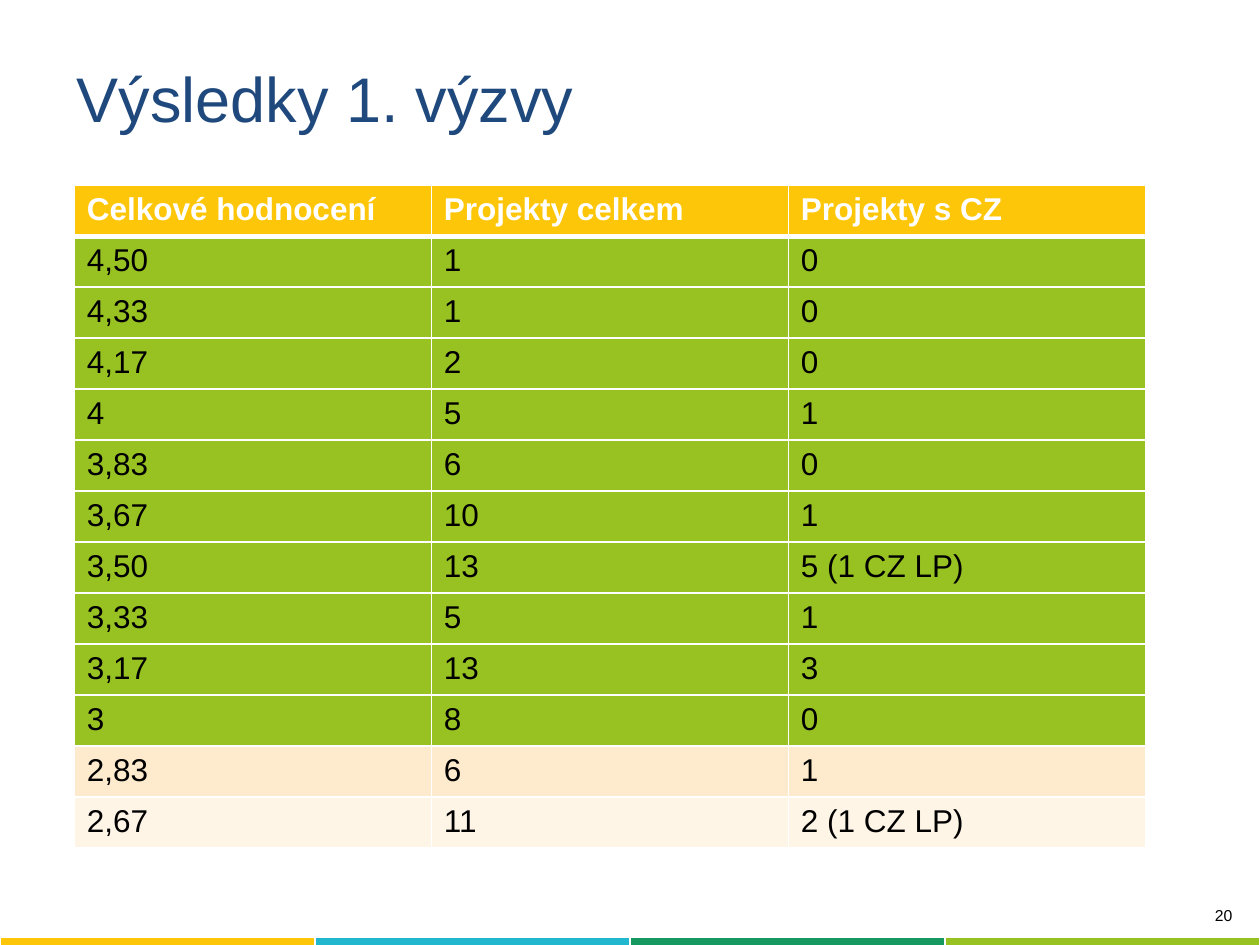
from dataclasses import dataclass

from lxml import etree
from pptx import Presentation
from pptx import util as u
from pptx.dml.color import RGBColor
from pptx.enum import text
from pptx.oxml import ns


@dataclass(frozen=True)
class Theme:
    font: str = "Arial"
    title_size: int = 36
    table_size: int = 18
    number_size: int = 9
    title: str = "1F497D"
    black: str = "000000"
    white: str = "FFFFFF"
    yellow: str = "FDC609"
    blue: str = "21B7CF"
    teal: str = "159960"
    green: str = "98C222"
    peach: str = "FEEACC"
    cream: str = "FFF5E7"


THEME = Theme()
HEADINGS = ("Celkové hodnocení", "Projekty celkem", "Projekty s CZ")
FUNDED = (
    ("4,50", "1", "0"),
    ("4,33", "1", "0"),
    ("4,17", "2", "0"),
    ("4", "5", "1"),
    ("3,83", "6", "0"),
    ("3,67", "10", "1"),
    ("3,50", "13", "5 (1 CZ LP)"),
    ("3,33", "5", "1"),
    ("3,17", "13", "3"),
    ("3", "8", "0"),
)
REJECTED = (("2,83", "6", "1"), ("2,67", "11", "2 (1 CZ LP)"))


def write_text(frame, content, *, size, color, bold=False, align=text.PP_ALIGN.LEFT):
    paragraph = frame.paragraphs[0]
    paragraph.alignment = align
    run = paragraph.add_run()
    run.text = content
    run.font.name = THEME.font
    run.font.size = u.Pt(size)
    run.font.bold = bold
    run.font.color.rgb = RGBColor.from_string(color)


def add_text_box(slide, content, left, top, width, height,
                 anchor=text.MSO_ANCHOR.TOP, **text_format):
    shape = slide.shapes.add_textbox(
        u.Inches(left), u.Inches(top), u.Inches(width), u.Inches(height))
    frame = shape.text_frame
    frame.word_wrap = True
    frame.vertical_anchor = anchor
    write_text(frame, content, **text_format)


def add_table(slide, rows, columns, left, top, width, row_height):
    shape = slide.shapes.add_table(
        rows, columns, u.Inches(left), u.Inches(top),
        u.Inches(width), u.Inches(rows * row_height))
    return shape.table


def fill_cell(cell, color):
    cell.fill.solid()
    cell.fill.fore_color.rgb = RGBColor.from_string(color)


def set_borders(cell, top, bottom):
    properties = cell._tc.get_or_add_tcPr()
    for side, width in (("L", 1), ("R", 1), ("T", top), ("B", bottom)):
        line = etree.SubElement(properties, ns.qn(f"a:ln{side}"), w=str(u.Pt(width)))
        fill = etree.SubElement(line, ns.qn("a:solidFill"))
        etree.SubElement(fill, ns.qn("a:srgbClr"), val=THEME.white)


def add_results(slide):
    rows = (HEADINGS, *FUNDED, *REJECTED)
    fills = (THEME.yellow, *[THEME.green] * len(FUNDED), THEME.peach, THEME.cream)
    table = add_table(slide, len(rows), len(HEADINGS), 0.59, 1.47, 8.5, 0.405)
    for row_index, (values, fill) in enumerate(zip(rows, fills)):
        heading = row_index == 0
        for column_index, value in enumerate(values):
            cell = table.cell(row_index, column_index)
            set_borders(cell, top=3 if row_index == 1 else 1, bottom=3 if heading else 1)
            fill_cell(cell, fill)
            write_text(cell.text_frame, value, size=THEME.table_size, bold=heading,
                       color=THEME.white if heading else THEME.black)


def add_color_bar(slide):
    colors = (THEME.yellow, THEME.blue, THEME.teal, THEME.green)
    table = add_table(slide, 1, len(colors), 0, 7.44, 10, 0.17)
    for cell, color in zip(table.iter_cells(), colors):
        fill_cell(cell, color)


def main():
    presentation = Presentation()
    presentation.slide_width = u.Inches(10)
    presentation.slide_height = u.Inches(7.5)
    slide = presentation.slides.add_slide(presentation.slide_layouts[6])
    add_color_bar(slide)
    add_text_box(slide, "20", 7.91, 7.14, 1.97, 0.31, size=THEME.number_size,
                 color=THEME.black, align=text.PP_ALIGN.RIGHT)
    add_text_box(slide, "Výsledky 1. výzvy", 0.51, 0.47, 8.5, 0.61,
                 anchor=text.MSO_ANCHOR.MIDDLE, size=THEME.title_size, color=THEME.title)
    add_results(slide)
    presentation.save("out.pptx")


if __name__ == "__main__":
    main()
